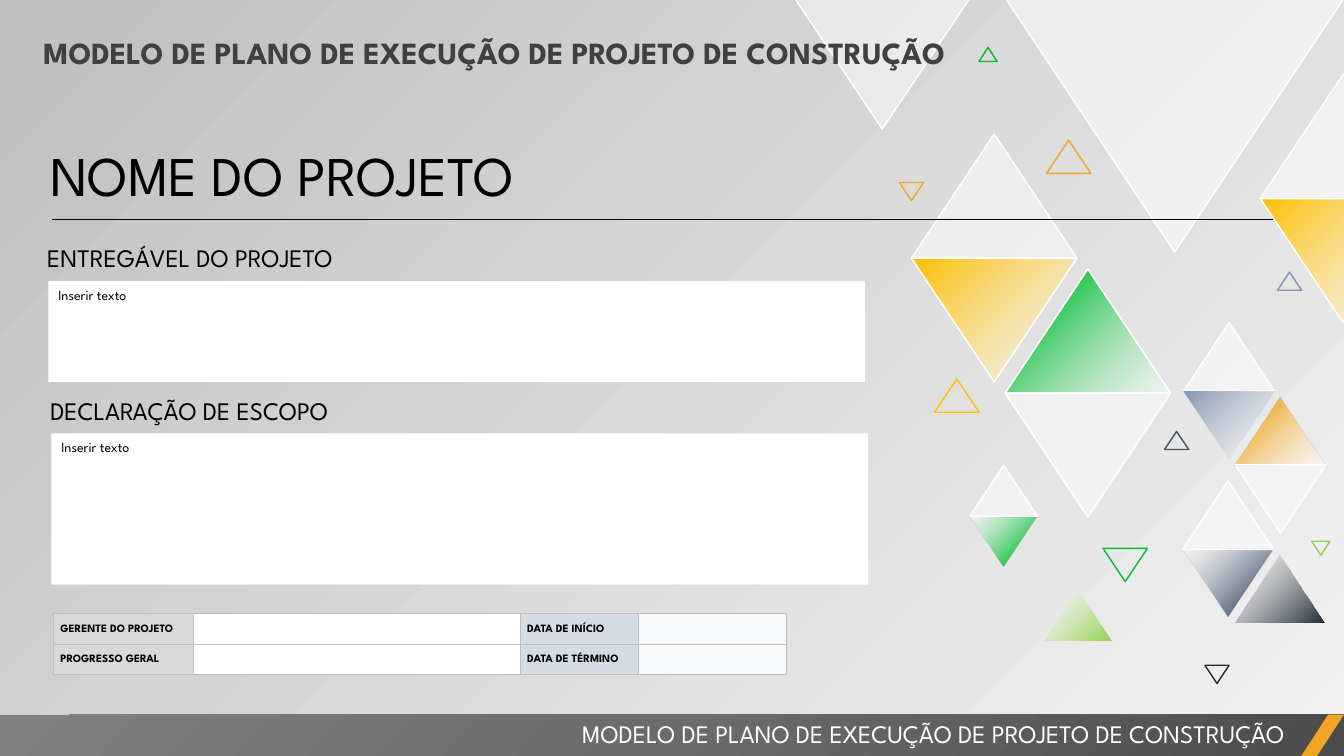
from lxml import etree
from pptx import Presentation
from pptx.dml.color import RGBColor
from pptx.enum.shapes import MSO_CONNECTOR, MSO_SHAPE as SHAPE
from pptx.enum.text import MSO_ANCHOR as ANCHOR, MSO_AUTO_SIZE as AUTO, PP_ALIGN as ALIGN
from pptx.oxml import parse_xml
from pptx.oxml.ns import qn
from pptx.util import Pt

PX = 9144  # 100 px to the inch
FONT = "League Spartan"
COLORS = {
    "white": "FFFFFF", "black": "000000", "title": "404040", "pale": "F2F2F2",
    "silver": "BFBFBF", "label": "D9D9D9", "date": "D6DCE5", "date_value": "F7F9FB",
    "gold": "FFC000", "orange": "F0A622", "green": "00BD32", "lime": "92D050",
    "steel": "8497B0", "slate": "44546A", "navy": "222A35",
    "bar_dark": "4C4C4C", "bar_mid": "6B6B6B", "bar_light": "808080",
}
TITLE = "MODELO DE PLANO DE EXECUÇÃO DE PROJETO DE CONSTRUÇÃO"

# left, top, width, points down, style, colour
TRIANGLES = [
    (904, 133, 164, False, "veil", "white"),
    (904, 256, 164, True, "fade out edged", "gold"),
    (997, 267, 164, False, "fade in edged", "green"),
    (997, 390, 164, True, "veil", "white"),
    (997, -2, 336, True, "veil", "white"),
    (1224, 550, 90, False, "fade out", "navy"),
    (1173, 544, 90, True, "fade in", "slate"),
    (1173, 477, 90, False, "veil", "white"),
    (1174, 320, 90, False, "veil", "white"),
    (1174, 388, 90, True, "fade out", "steel"),
    (1225, 394, 90, False, "fade in", "orange"),
    (1225, 461, 90, True, "veil", "white"),
    (1035, 585, 67, False, "fade out", "lime"),
    (962, 512, 67, True, "fade in", "green"),
    (962, 462, 67, False, "veil", "white"),
    (1250, 74, 164, False, "veil", "white"),
    (1250, 197, 164, True, "fade out edged", "gold"),
    (1094, 544, 44, True, "outline", "green"),
    (927, 376, 44, False, "outline", "gold"),
    (1155, 428, 24, False, "outline", "slate"),
    (1195, 660, 24, True, "outline", "navy"),
    (892, 181, 24, True, "outline", "orange"),
    (1267, 270, 24, False, "outline", "steel"),
    (971, 47, 18, False, "outline", "green"),
    (1301, 537, 18, True, "outline", "lime"),
    (1038, 139, 44, False, "outline", "orange"),
    (788, -2, 174, True, "veil", "white"),
]
# text, frame, size, colour, alignment
HEADINGS = [
    (TITLE, (330, 708, 954, 40), 18, "white", ALIGN.RIGHT),
    ("NOME DO PROJETO", (40, 135, 1227, 77), 40, "black", ALIGN.LEFT),
    ("ENTREGÁVEL DO PROJETO", (37, 236, 529, 40), 18, "black", ALIGN.LEFT),
    ("DECLARAÇÃO DE ESCOPO", (40, 387, 529, 40), 18, "black", ALIGN.LEFT),
]
ENTRY_BOXES = [(48, 279, 810, 100), (51, 430, 810, 150)]
ENTRY_TEXT = "Inserir texto"
TABLE_ROWS = [
    ("GERENTE DO PROJETO", "", "DATA DE INÍCIO", ""),
    ("PROGRESSO GERAL", "", "DATA DE TÉRMINO", ""),
]
TABLE_COLUMNS = [(139, "label"), (324, "white"), (117, "date"), (147, "date_value")]
ROW_HEIGHT = 30


def emu(lengths):
    return [length * PX for length in lengths]


def rgb(name):
    return RGBColor.from_string(COLORS[name])


def set_blend(fill, holder, stops, direction='<a:lin ang="13500000" scaled="0"/>'):
    """Swap the fill in holder for a gradient of (position, colour, opacity) stops."""
    fill.solid()
    marks = "".join(
        f'<a:gs pos="{place * 1000}"><a:srgbClr val="{COLORS[name]}">'
        f'<a:alpha val="{opacity * 1000}"/></a:srgbClr></a:gs>'
        for place, name, opacity in stops)
    solid = holder.find(qn("a:solidFill"))
    holder.replace(solid, parse_xml(
        '<a:gradFill xmlns:a="http://schemas.openxmlformats.org/drawingml/2006/main" '
        f'rotWithShape="1"><a:gsLst>{marks}</a:gsLst>{direction}</a:gradFill>'))


def set_outline(shape, name=None):
    shape.shadow.inherit = False
    if name:
        shape.line.color.rgb = rgb(name)
        shape.line.width = Pt(1)
    else:
        shape.line.fill.background()


def write(frame, text, size, color, align=ALIGN.LEFT, bold=False):
    para = frame.paragraphs[0]
    para.alignment = align
    span = para.add_run()
    span.text = text
    span.font.color.rgb = rgb(color)
    for name, value in {"name": FONT, "size": Pt(size), "bold": bold}.items():
        setattr(span.font, name, value)
    return para


def set_frame(frame):
    settings = {"word_wrap": True, "vertical_anchor": ANCHOR.TOP,
                "auto_size": AUTO.SHAPE_TO_FIT_TEXT}
    for name, value in settings.items():
        setattr(frame, name, value)


def add_triangle(group, left, top, width, down, style, color):
    shape = group.shapes.add_shape(
        SHAPE.ISOSCELES_TRIANGLE, *emu((left, top, width, round(width * 0.75))))
    shape.rotation = 180 if down else 0
    if style == "outline":
        shape.fill.background()
        set_outline(shape, color)
        return
    set_outline(shape, "white" if style == "veil" or "edged" in style else None)
    if style == "veil":
        stops = [(0, color, 50), (100, color, 50)]
    elif style.startswith("fade out"):
        stops = [(0, color, 100), (100, "white", 50)]
    else:
        stops = [(0, "white", 50), (82, color, 100)]
    set_blend(shape.fill, shape._element.spPr, stops)


def add_footer(page):
    builder = page.shapes.build_freeform(0, 709, scale=PX)
    builder.add_line_segments([(1333, 709), (1333, 751), (0, 751)], close=True)
    bar = builder.convert_to_shape()
    set_outline(bar)
    set_blend(bar.fill, bar._element.spPr,
              [(0, "bar_dark", 100), (50, "bar_mid", 100), (100, "bar_light", 100)],
              '<a:path path="circle"><a:fillToRect l="100000" t="100000"/></a:path>')
    slash = page.shapes.add_shape(SHAPE.PARALLELOGRAM, *emu((1290, 709, 43, 42)))
    slash.adjustments[0] = 0.65
    slash.fill.solid()
    slash.fill.fore_color.rgb = rgb("orange")
    set_outline(slash)


def add_border(cell):
    props = cell._tc.get_or_add_tcPr()
    for index, side in enumerate(("lnL", "lnR", "lnT", "lnB")):
        edge = etree.Element(qn(f"a:{side}"), w=str(Pt(1)))
        solid = etree.SubElement(edge, qn("a:solidFill"))
        etree.SubElement(solid, qn("a:srgbClr"), val=COLORS["silver"])
        props.insert(index, edge)


def add_details(page):
    widths = [width for width, _ in TABLE_COLUMNS]
    size = (sum(widths), ROW_HEIGHT * len(TABLE_ROWS))
    table = page.shapes.add_table(
        len(TABLE_ROWS), len(widths), *emu((53, 609, *size))).table
    table.first_row = table.horz_banding = False
    margins = {"margin_left": 7 * PX, "margin_right": 7 * PX,
               "margin_top": 0, "margin_bottom": 0, "vertical_anchor": ANCHOR.MIDDLE}
    for column, width in zip(table.columns, widths):
        column.width = width * PX
    for row, texts in zip(table.rows, TABLE_ROWS):
        row.height = ROW_HEIGHT * PX
        for cell, text, (_, color) in zip(row.cells, texts, TABLE_COLUMNS):
            for name, value in margins.items():
                setattr(cell, name, value)
            cell.fill.solid()
            cell.fill.fore_color.rgb = rgb(color)
            write(cell.text_frame, text, 8, "black", bold=True).line_spacing = 1.07
            add_border(cell)


def main():
    deck = Presentation()
    deck.slide_width, deck.slide_height = emu((1333, 750))
    page = deck.slides.add_slide(deck.slide_layouts[5])
    backdrop = page.background.fill
    backdrop.solid()
    set_blend(backdrop, page._element.cSld.bg.bgPr,
              [(0, "pale", 40), (100, "silver", 100)])

    group = page.shapes.add_group_shape()
    for triangle in TRIANGLES:
        add_triangle(group, *triangle)

    title = page.shapes.title
    page.shapes._spTree.append(title._element)  # in front of the triangles
    title.left, title.top, title.width, title.height = emu((33, 28, 1015, 47))
    set_frame(title.text_frame)
    write(title.text_frame, TITLE, 22, "title", bold=True)

    add_footer(page)
    for text, place, size, color, align in HEADINGS:
        box = page.shapes.add_textbox(*emu(place))
        set_frame(box.text_frame)
        write(box.text_frame, text, size, color, align)
    rule = page.shapes.add_connector(MSO_CONNECTOR.STRAIGHT, *emu((52, 218, 1263, 218)))
    rule.line.color.rgb = rgb("black")
    rule.line.width = Pt(0.5)
    etree.SubElement(rule._element.spPr, qn("a:effectLst"))
    add_details(page)
    for place in ENTRY_BOXES:
        box = page.shapes.add_shape(SHAPE.RECTANGLE, *emu(place))
        box.fill.solid()
        box.fill.fore_color.rgb = rgb("white")
        set_outline(box)
        set_frame(box.text_frame)
        box.text_frame.auto_size = AUTO.NONE
        write(box.text_frame, ENTRY_TEXT, 10, "black")
    deck.save("out.pptx")


if __name__ == "__main__":
    main()
